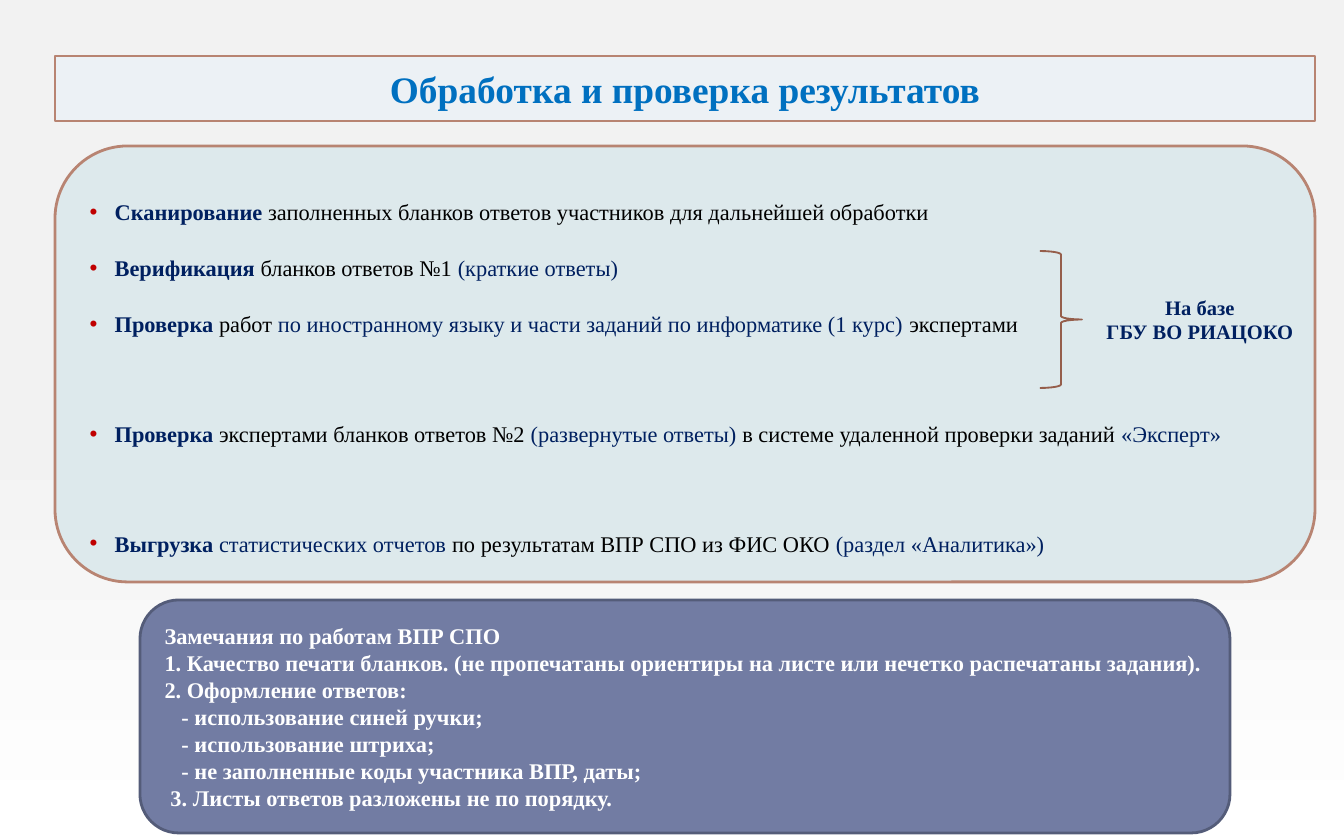
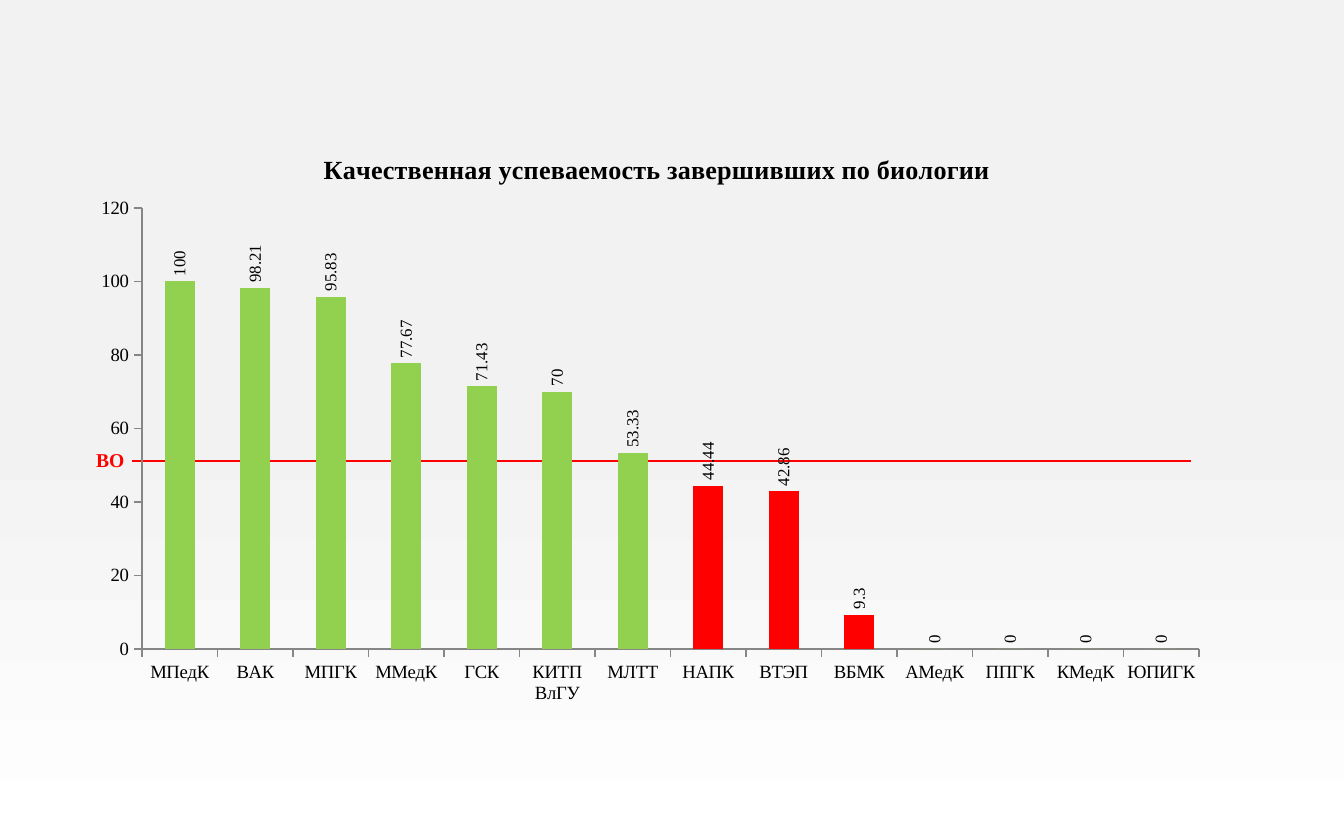
"""Build two slides on checking test results: the process and a biology chart."""
from lxml.etree import SubElement
from pptx import Presentation
from pptx.chart.data import CategoryChartData
from pptx.dml.color import RGBColor
from pptx.enum.chart import XL_CHART_TYPE, XL_LABEL_POSITION, XL_TICK_MARK
from pptx.enum.shapes import MSO_CONNECTOR, MSO_SHAPE
from pptx.enum.text import MSO_ANCHOR, MSO_AUTO_SIZE, PP_ALIGN
from pptx.oxml import parse_xml
from pptx.oxml.ns import nsdecls, qn
from pptx.util import Emu, Pt

FONT = "Times New Roman"
COLORS = {name: RGBColor.from_string(value) for name, value in {
    "page": "F2F2F2", "white": "FFFFFF", "black": "000000", "title": "0070C0",
    "title_fill": "ECF1F5", "list_fill": "DDE9EC", "border": "B88472",
    "brace": "955E4B", "navy": "002060", "notes_fill": "727CA3",
    "notes_border": "545C79", "green": "92D050", "red": "FF0000",
    "axis": "868686"}.items()}
BULLET_COLOR = "C00000"


def px(value):
    """Convert pixels to EMU."""
    return Emu(round(value * 914400 / 134.4))


def write(frame, spans, size=12, align=PP_ALIGN.LEFT, spacing=1.0, before=0,
          indent=0, bullet=False):
    """Add a paragraph made of (text, colour, bold) spans."""
    para = frame.add_paragraph() if frame.text else frame.paragraphs[0]
    para.alignment = align
    para.line_spacing = spacing
    para.space_before = Pt(before)
    properties = para._p.get_or_add_pPr()
    properties.set("marL", str(px(indent)))
    properties.set("indent", str(px(-indent if bullet else 0)))
    if bullet:
        color = SubElement(properties, qn("a:buClr"))
        SubElement(color, qn("a:srgbClr"), val=BULLET_COLOR)
        SubElement(properties, qn("a:buFont"), typeface="Arial")
        SubElement(properties, qn("a:buChar"), char="•")
    else:
        SubElement(properties, qn("a:buNone"))
    para.font.size = Pt(size)
    for text, color, bold in spans:
        span = para.add_run()
        span.text = text
        span.font.name = FONT
        span.font.size = Pt(size)
        span.font.bold = bold
        span.font.color.rgb = COLORS[color]


deck = Presentation()
deck.slide_width, deck.slide_height = px(1344), px(840)
backdrop = deck.slide_master.background.fill
backdrop.gradient()
backdrop.gradient_angle = 270
for stop, position, color in zip(backdrop.gradient_stops, (0.5, 1), ("page", "white")):
    stop.position = position
    stop.color.rgb = COLORS[color]

page = deck.slides.add_slide(deck.slide_layouts[1])
title, steps = page.placeholders
notes = page.shapes.add_shape(MSO_SHAPE.ROUNDED_RECTANGLE, 0, 0, 0, 0)
for panel, place, fill, border in (
        (title, (55, 56, 1260, 65), "title_fill", "border"),
        (steps, (55, 146, 1260, 436), "list_fill", "border"),
        (notes, (140, 600, 1090, 233), "notes_fill", "notes_border")):
    panel.left, panel.top, panel.width, panel.height = map(px, place)
    if panel.is_placeholder:
        outline = SubElement(panel.element.spPr, qn("a:prstGeom"), prst="roundRect")
        SubElement(outline, qn("a:avLst"))
    panel.fill.solid()
    panel.fill.fore_color.rgb = COLORS[fill]
    panel.line.color.rgb = COLORS[border]
    panel.line.width = Pt(1.5)
    panel.shadow.inherit = False
    panel.text_frame.word_wrap = True
    panel.text_frame.auto_size = MSO_AUTO_SIZE.NONE
    panel.text_frame.vertical_anchor = MSO_ANCHOR.MIDDLE

write(title.text_frame, [("Обработка и проверка результатов", "title", True)],
      size=20, align=PP_ALIGN.CENTER)

STEPS = [
    (0, [("Сканирование ", "navy", True),
         ("заполненных бланков ответов участников для дальнейшей обработки",
          "black", False)]),
    (1.2, [("Верификация", "navy", True), (" бланков ответов №1 ", "black", False),
           ("(краткие ответы)", "navy", False)]),
    (1.2, [("Проверка", "navy", True), (" работ ", "black", False),
           ("по иностранному языку и части заданий по информатике (1 курс) ",
            "navy", False),
           ("экспертами", "black", False)]),
    (30, [("Проверка", "navy", True),
          (" экспертами бланков ответов №2 ", "black", False),
          ("(развернутые ответы)", "navy", False),
          (" в системе удаленной проверки заданий ", "black", False),
          ("«Эксперт»", "navy", False)]),
    (30, [("Выгрузка ", "navy", True), ("статистических отчетов ", "navy", False),
          ("по результатам ВПР СПО из ФИС ОКО ", "black", False),
          ("(раздел «Аналитика»)", "navy", False)]),
]
for before, spans in STEPS:
    write(steps.text_frame, spans, align=PP_ALIGN.JUSTIFY, spacing=2.0,
          before=before, indent=25, bullet=True)

brace = page.shapes.add_shape(MSO_SHAPE.RIGHT_BRACE, *map(px, (1040, 251, 42, 137)))
brace.fill.background()
brace.line.color.rgb = COLORS["brace"]
brace.line.width = Pt(1)
brace.shadow.inherit = False

place_label = page.shapes.add_textbox(*map(px, (1083, 288, 234, 63)))
place_label.text_frame.word_wrap = True
for text in ("На базе", "ГБУ ВО РИАЦОКО"):
    write(place_label.text_frame, [(text, "navy", True)], size=11,
          align=PP_ALIGN.CENTER)

for indent, text in (
        (0, "Замечания по работам ВПР СПО"),
        (0, "1. Качество печати бланков. (не пропечатаны ориентиры на листе "
            "или нечетко распечатаны задания)."),
        (0, "2. Оформление ответов:"),
        (17, "- использование синей ручки;"),
        (17, "- использование штриха;"),
        (17, "- не заполненные коды участника ВПР, даты;"),
        (6, "3. Листы ответов разложены не по порядку.")):
    write(notes.text_frame, [(text, "white", True)], indent=indent)

page = deck.slides.add_slide(deck.slide_layouts[6])
average = page.shapes.add_connector(
    MSO_CONNECTOR.STRAIGHT, *map(px, (1191, 461, 132, 461)))
average.line.color.rgb = COLORS["red"]
average.line.width = Pt(1.5)
SubElement(average.element.spPr, qn("a:effectLst"))

RESULTS = {"МПедК": 100, "ВАК": 98.21, "МПГК": 95.83, "ММедК": 77.67, "ГСК": 71.43,
           "КИТП ВлГУ": 70, "МЛТТ": 53.33, "НАПК": 44.44, "ВТЭП": 42.86,
           "ВБМК": 9.3, "АМедК": 0, "ППГК": 0, "КМедК": 0, "ЮПИГК": 0}
data = CategoryChartData()
data.categories = list(RESULTS)
data.add_series("Series 1", list(RESULTS.values()))
chart = page.shapes.add_chart(XL_CHART_TYPE.COLUMN_CLUSTERED,
                              *map(px, (79, 124, 1142, 593)), data).chart
chart.has_legend = False
chart.font.name = "Calibri"
chart.font.size = Pt(10)
chart.font.color.rgb = COLORS["black"]
chart.has_title = True
write(chart.chart_title.text_frame,
      [("Качественная успеваемость завершивших по биологии", "black", True)],
      size=14, align=PP_ALIGN.CENTER)

for axis in (chart.category_axis, chart.value_axis):
    axis.has_major_gridlines = False
    axis.major_tick_mark = XL_TICK_MARK.OUTSIDE
    axis.minor_tick_mark = XL_TICK_MARK.NONE
    axis.format.line.color.rgb = COLORS["axis"]
    axis.tick_labels.font.name = FONT
    axis.tick_labels.font.size = Pt(10)
chart.value_axis.minimum_scale = 0
chart.value_axis.maximum_scale = 120
chart.value_axis.major_unit = 20

plot = chart.plots[0]
plot.gap_width = 150
plot.vary_by_categories = False
bars = plot.series[0]
bars.invert_if_negative = False
bars.format.fill.solid()
bars.format.fill.fore_color.rgb = COLORS["green"]
for index in (7, 8, 9):
    fill = bars.points[index].format.fill
    fill.solid()
    fill.fore_color.rgb = COLORS["red"]
labels = bars.data_labels
labels.show_value = True
labels.position = XL_LABEL_POSITION.OUTSIDE_END
labels.font.name = FONT
labels.font.size = Pt(9)
turn = labels._element.find(qn("c:txPr")).find(qn("a:bodyPr"))
turn.set("rot", "-5400000")
turn.set("vert", "horz")

plot_area = chart._chartSpace.chart.plotArea
for parent, index, sizes in (
        (chart.chart_title._element, 1, {"x": 0.21, "y": 0.04}),
        (plot_area, 0, {"x": 63 / 1142, "y": 84 / 593,
                        "w": 1057 / 1142, "h": 441 / 593})):
    for old in parent.findall(qn("c:layout")):
        parent.remove(old)
    layout = parse_xml(f"<c:layout {nsdecls('c')}/>")
    manual = SubElement(layout, qn("c:manualLayout"))
    if parent is plot_area:
        SubElement(manual, qn("c:layoutTarget"), val="inner")
    for side in ("x", "y"):
        SubElement(manual, qn(f"c:{side}Mode"), val="edge")
    for side, share in sizes.items():
        SubElement(manual, qn(f"c:{side}"), val=f"{share:.4f}")
    parent.insert(index, layout)

average_label = page.shapes.add_textbox(*map(px, (83, 441, 56, 39)))
average_label.text_frame.word_wrap = False
write(average_label.text_frame, [("ВО", "red", True)], size=10.5)

deck.save("out.pptx")
